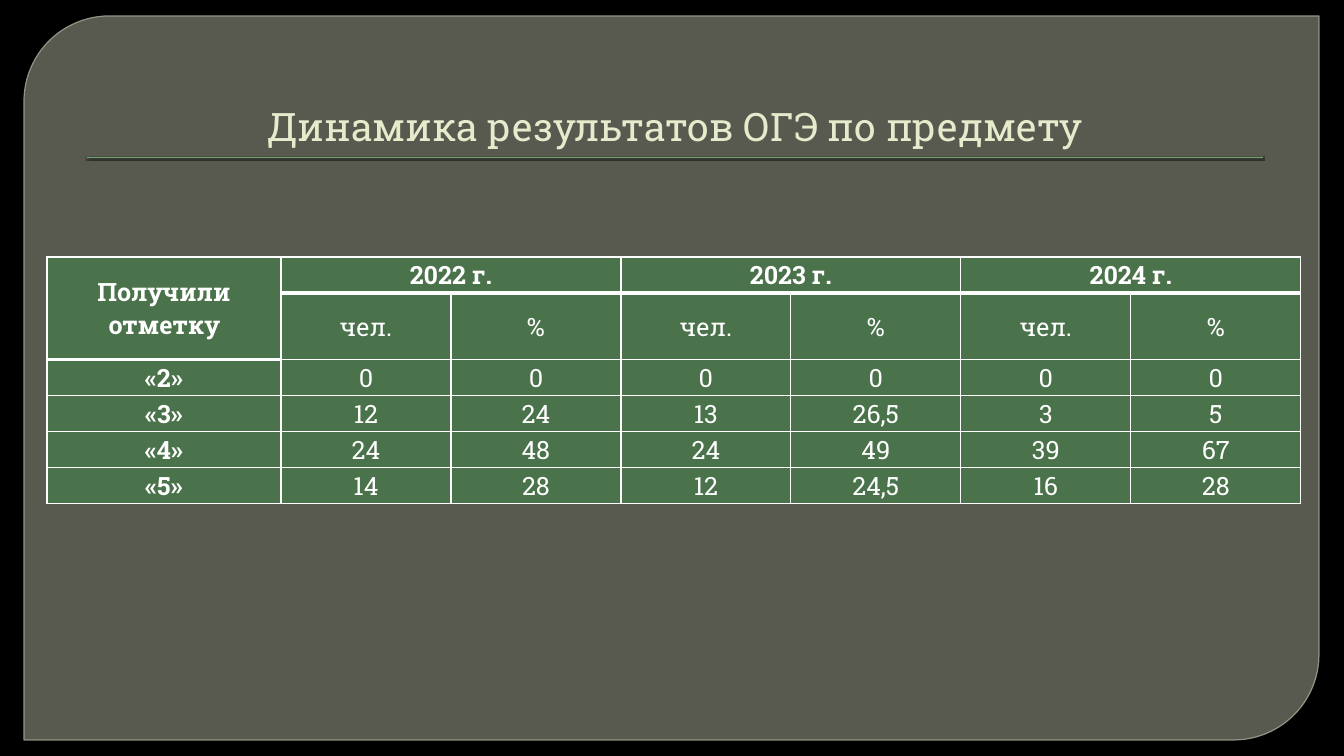
from lxml import etree
from pptx import Presentation
from pptx import util as u
from pptx.dml import color
from pptx.enum import shapes, text
from pptx.oxml import ns

TITLE = "Динамика результатов ОГЭ по предмету"
CORNER = "Получили отметку"
YEARS = ["2022 г.", "2023 г.", "2024 г."]
UNITS = ["чел.", "%"]
MARKS = [
    ("«2»", "0", "0", "0", "0", "0", "0"),
    ("«3»", "12", "24", "13", "26,5", "3", "5"),
    ("«4»", "24", "48", "24", "49", "39", "67"),
    ("«5»", "14", "28", "12", "24,5", "16", "28"),
]
FONT = "Roboto Slab"
WHITE, GREEN = "FFFFFF", "4B734B"
FIRST, COL, ROW = 234, 170, 36


def px(n):
    return round(n * 914400 / 100.8)


def rgb(code):
    return color.RGBColor.from_string(code)


def add(parent, tag, **attrs):
    node = etree.SubElement(parent, ns.qn(tag))
    for key, val in attrs.items():
        node.set(key, str(val))
    return node


def fade(fill, code, share):
    fill.solid()
    fill.fore_color.rgb = rgb(code)
    clr = fill._xPr.find(".//" + ns.qn("a:srgbClr"))
    add(clr, "a:alpha", val=share * 1000)


def style(par, size, code, bold=False):
    par.alignment = text.PP_ALIGN.CENTER
    for run in par.runs:
        font = run.font
        font.name, font.size, font.bold = FONT, u.Pt(size), bold
        font.color.rgb = rgb(code)


def edge(cell, side, width):
    line = add(cell._tc.get_or_add_tcPr(), "a:ln" + side, w=u.Pt(width))
    add(add(line, "a:solidFill"), "a:srgbClr", val=WHITE)


def dress(cell, row, col, label):
    last = 1 if col == 0 else 0
    edge(cell, "L", 1)
    edge(cell, "R", 1)
    edge(cell, "T", 3 if row == last + 1 else 1)
    edge(cell, "B", 3 if row <= last else 1)
    cell.fill.solid()
    cell.fill.fore_color.rgb = rgb(GREEN)
    cell.margin_left = cell.margin_right = px(7)
    cell.margin_top = cell.margin_bottom = 0
    cell.vertical_anchor = text.MSO_ANCHOR.MIDDLE
    cell.text = label
    style(cell.text_frame.paragraphs[0], 18, WHITE, row == 0 or col == 0)


def draw_panel(slide):
    panel = slide.shapes.add_shape(
        shapes.MSO_SHAPE.ROUND_2_DIAG_RECTANGLE, px(24), px(16), px(1295), px(724))
    panel.adjustments[0], panel.adjustments[1] = 0.118, 0
    panel.shadow.inherit = False
    fade(panel.fill, "888B7B", 65)
    fade(panel.line.fill, "9DA090", 88)
    panel.line.width = u.Pt(0.87)


def draw_rule(slide):
    rule = slide.shapes.add_shape(
        shapes.MSO_SHAPE.RECTANGLE, px(87), px(157), px(1176), px(1))
    rule.fill.solid()
    rule.fill.fore_color.rgb = rgb("72A376")
    rule.line.fill.background()
    rule.shadow.inherit = False
    glow = rule._element.spPr.find(ns.qn("a:effectLst"))
    shade = add(glow, "a:outerShdw", blurRad=u.Pt(1), dist=u.Pt(1), dir=5400000)
    add(add(shade, "a:srgbClr", val="000000"), "a:alpha", val=75000)


def draw_title(slide):
    title = slide.shapes.title
    title.left, title.top, title.width, title.height = px(67), px(28), px(1210), px(126)
    frame = title.text_frame
    frame.text = TITLE
    frame.word_wrap = True
    frame.vertical_anchor = text.MSO_ANCHOR.BOTTOM
    par = frame.paragraphs[0]
    par._p.get_or_add_pPr().set("marL", str(px(6)))
    style(par, 28, "E7EACB")
    tree = slide.shapes._spTree
    tree.remove(title._element)
    tree.append(title._element)


def draw_table(slide):
    heads = [CORNER]
    for year in YEARS:
        heads += [year, ""]
    grid = [heads, [""] + UNITS * len(YEARS), *MARKS]
    rows, cols = len(grid), len(heads)
    table = slide.shapes.add_table(
        rows, cols, px(47), px(257), px(FIRST + COL * (cols - 1)), px(ROW * rows)).table
    table.first_row = table.horz_banding = False
    for i, col in enumerate(table.columns):
        col.width = px(COL if i else FIRST)
    for row in table.rows:
        row.height = px(ROW)
    for r, labels in enumerate(grid):
        for c, label in enumerate(labels):
            dress(table.cell(r, c), r, c, label)
    table.cell(0, 0).merge(table.cell(1, 0))
    for c in range(1, cols, len(UNITS)):
        table.cell(0, c).merge(table.cell(0, c + 1))


def main():
    deck = Presentation()
    deck.slide_width, deck.slide_height = px(1344), px(756)
    slide = deck.slides.add_slide(deck.slide_layouts[5])
    back = slide.background.fill
    back.solid()
    back.fore_color.rgb = rgb("000000")
    draw_panel(slide)
    draw_rule(slide)
    draw_title(slide)
    draw_table(slide)
    deck.save("out.pptx")


if __name__ == "__main__":
    main()
